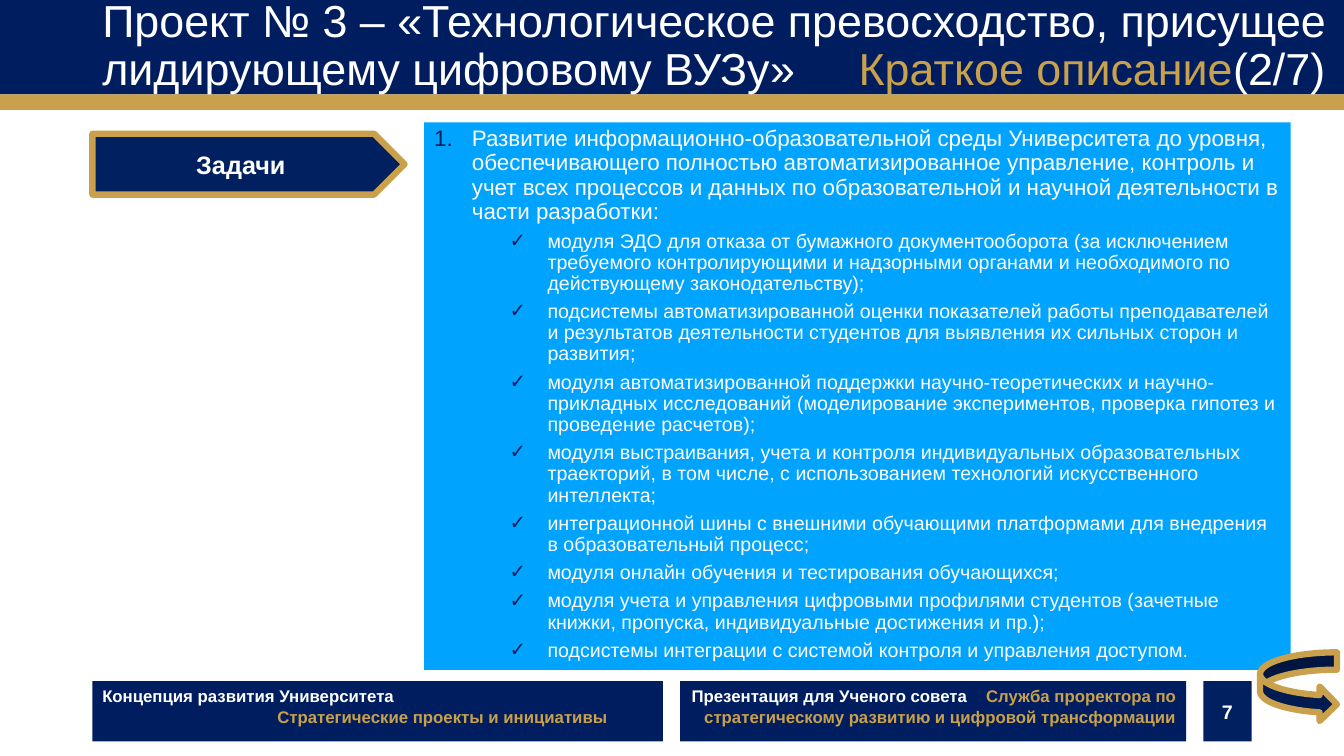
from dataclasses import dataclass

from lxml import etree
from pptx import Presentation
from pptx.dml.color import RGBColor
from pptx.enum.shapes import MSO_SHAPE as Shape
from pptx.enum.text import MSO_ANCHOR as Anchor, PP_ALIGN as Align
from pptx.oxml.ns import qn
from pptx.util import Pt


@dataclass(frozen=True)
class Theme:
    font: str = "Arial"
    navy: str = "001E5F"
    label: str = "002060"
    arrow: str = "001B50"
    gold: str = "C9A04B"
    blue: str = "00A3FE"
    white: str = "FFFFFF"
    title: int = 32
    heading: int = 18
    task: int = 16
    item: int = 14
    footer: int = 12
    border: float = 4.5


T = Theme()
WIDTH, HEIGHT = 960, 540

TASK = (
    "Развитие информационно-образовательной среды Университета до уровня, "
    "обеспечивающего полностью автоматизированное управление, контроль и учет "
    "всех процессов и данных по образовательной и научной деятельности в части разработки:"
)
ITEMS = [
    "модуля ЭДО для отказа от бумажного документооборота (за исключением требуемого "
    "контролирующими и надзорными органами и необходимого по действующему законодательству);",
    "подсистемы автоматизированной оценки показателей работы преподавателей и результатов "
    "деятельности студентов для выявления их сильных сторон и развития;",
    "модуля автоматизированной поддержки научно-теоретических и научно-прикладных "
    "исследований (моделирование экспериментов, проверка гипотез и проведение расчетов);",
    "модуля выстраивания, учета и контроля индивидуальных образовательных траекторий, "
    "в том числе, с использованием технологий искусственного интеллекта;",
    "интеграционной шины с внешними обучающими платформами для внедрения в образовательный процесс;",
    "модуля онлайн обучения и тестирования обучающихся;",
    "модуля учета и управления цифровыми профилями студентов (зачетные книжки, пропуска, "
    "индивидуальные достижения и пр.);",
    "подсистемы интеграции с системой контроля и управления доступом.",
]


def add_box(s, kind, box, fill, line=None, anchor=Anchor.TOP):
    sp = s.shapes.add_shape(kind, *map(Pt, box))
    sp.shadow.inherit = False
    sp.fill.solid()
    sp.fill.fore_color.rgb = RGBColor.from_string(fill)
    if line:
        sp.line.color.rgb = RGBColor.from_string(line)
        sp.line.width = Pt(T.border)
    else:
        sp.line.fill.background()
    sp.text_frame.word_wrap = True
    sp.text_frame.vertical_anchor = anchor
    return sp


def add_run(p, text, size, color=T.white, bold=False, tracking=0):
    r = p.add_run()
    r.text = text
    r.font.name = T.font
    r.font.size = Pt(size)
    r.font.bold = bold
    r.font.color.rgb = RGBColor.from_string(color)
    if tracking:
        r._r.get_or_add_rPr().set("spc", str(tracking * 100))


def set_indent(p, left, first=0):
    pPr = p._p.get_or_add_pPr()
    pPr.set("marL", str(Pt(left)))
    pPr.set("indent", str(Pt(first)))
    return pPr


def add_bullet(p, left, hanging, tag, **attrs):
    pPr = set_indent(p, left, -hanging)
    color = etree.SubElement(pPr, qn("a:buClr"))
    etree.SubElement(color, qn("a:srgbClr"), val=T.navy)
    etree.SubElement(pPr, qn("a:buFont"), typeface=T.font)
    etree.SubElement(pPr, qn(tag), **attrs)


def add_header(s, x, y, w, h):
    band, margin = 67.5, 66
    add_box(s, Shape.RECTANGLE, (x, y, w, band), T.navy)
    add_box(s, Shape.RECTANGLE, (x, y + band, w, h - band), T.gold)
    tb = s.shapes.add_textbox(*map(Pt, (x + margin, y, w - margin, band)))
    tf = tb.text_frame
    tf.word_wrap = True
    tf.vertical_anchor = Anchor.MIDDLE
    p = tf.paragraphs[0]
    p.line_spacing = 0.9
    add_run(p, "Проект № 3 – «Технологическое превосходство, присущее лидирующему цифровому ВУЗу»", T.title)
    add_run(p, " ", T.title, tracking=36)
    add_run(p, "Краткое описание", T.title, T.gold)
    add_run(p, "(2/7)", T.title)


def add_label(s, x, y, w, h):
    sp = add_box(s, Shape.PENTAGON, (x, y, w, h), T.label, T.gold, Anchor.MIDDLE)
    p = sp.text_frame.paragraphs[0]
    p.alignment = Align.CENTER
    add_run(p, "Задачи", T.heading, bold=True)


def add_tasks(s, x, y, w, h):
    tf = add_box(s, Shape.RECTANGLE, (x, y, w, h), T.blue).text_frame
    p = tf.paragraphs[0]
    p.alignment = Align.LEFT
    p.line_spacing = 0.9
    p.space_before = Pt(10)
    add_bullet(p, 27, 27, "a:buAutoNum", type="arabicPeriod")
    add_run(p, TASK, T.task)
    for item in ITEMS:
        p = tf.add_paragraph()
        p.level = 1
        p.alignment = Align.LEFT
        p.line_spacing = 0.9
        p.space_before = Pt(5)
        add_bullet(p, 81, 27, "a:buChar", char="✓")
        add_run(p, item, T.item)


def add_footer(s, x, y, w, h):
    concept_w, council_w, number_w = 407.5, 361.5, 34.5
    gap = (w - concept_w - council_w - number_w) / 2
    council_x = x + concept_w + gap
    number_x = council_x + council_w + gap

    tf = add_box(s, Shape.RECTANGLE, (x, y, concept_w, h), T.navy).text_frame
    p = tf.paragraphs[0]
    p.alignment = Align.LEFT
    add_run(p, "Концепция развития Университета", T.footer, bold=True)
    p = tf.add_paragraph()
    p.alignment = Align.LEFT
    set_indent(p, 125)
    add_run(p, "Стратегические проекты и инициативы", T.footer, T.gold, True)

    tf = add_box(s, Shape.RECTANGLE, (council_x, y, council_w, h), T.navy).text_frame
    p = tf.paragraphs[0]
    p.alignment = Align.RIGHT
    add_run(p, "Презентация для Ученого совета", T.footer, bold=True)
    add_run(p, " ", T.footer, bold=True, tracking=10)
    add_run(p, "Служба проректора по стратегическому развитию и цифровой трансформации", T.footer, T.gold, True)

    sp = add_box(s, Shape.RECTANGLE, (number_x, y, number_w, h), T.label, anchor=Anchor.MIDDLE)
    p = sp.text_frame.paragraphs[0]
    p.alignment = Align.CENTER
    add_run(p, "7", T.item, bold=True)


def add_next_arrow(s, x, y, w, h):
    add_box(s, Shape.CURVED_RIGHT_ARROW, (x, y, w, h), T.arrow, T.gold)


def main():
    prs = Presentation()
    prs.slide_width, prs.slide_height = Pt(WIDTH), Pt(HEIGHT)
    s = prs.slides.add_slide(prs.slide_layouts[6])
    add_header(s, 0, 0, WIDTH, 78.5)
    add_label(s, 66, 95.5, 223, 43.5)
    add_footer(s, 66, 486.5, 828, 43)
    add_tasks(s, 303, 87.5, 619, 391)
    add_next_arrow(s, 900, 466, 55, 49.5)
    prs.save("out.pptx")


if __name__ == "__main__":
    main()
